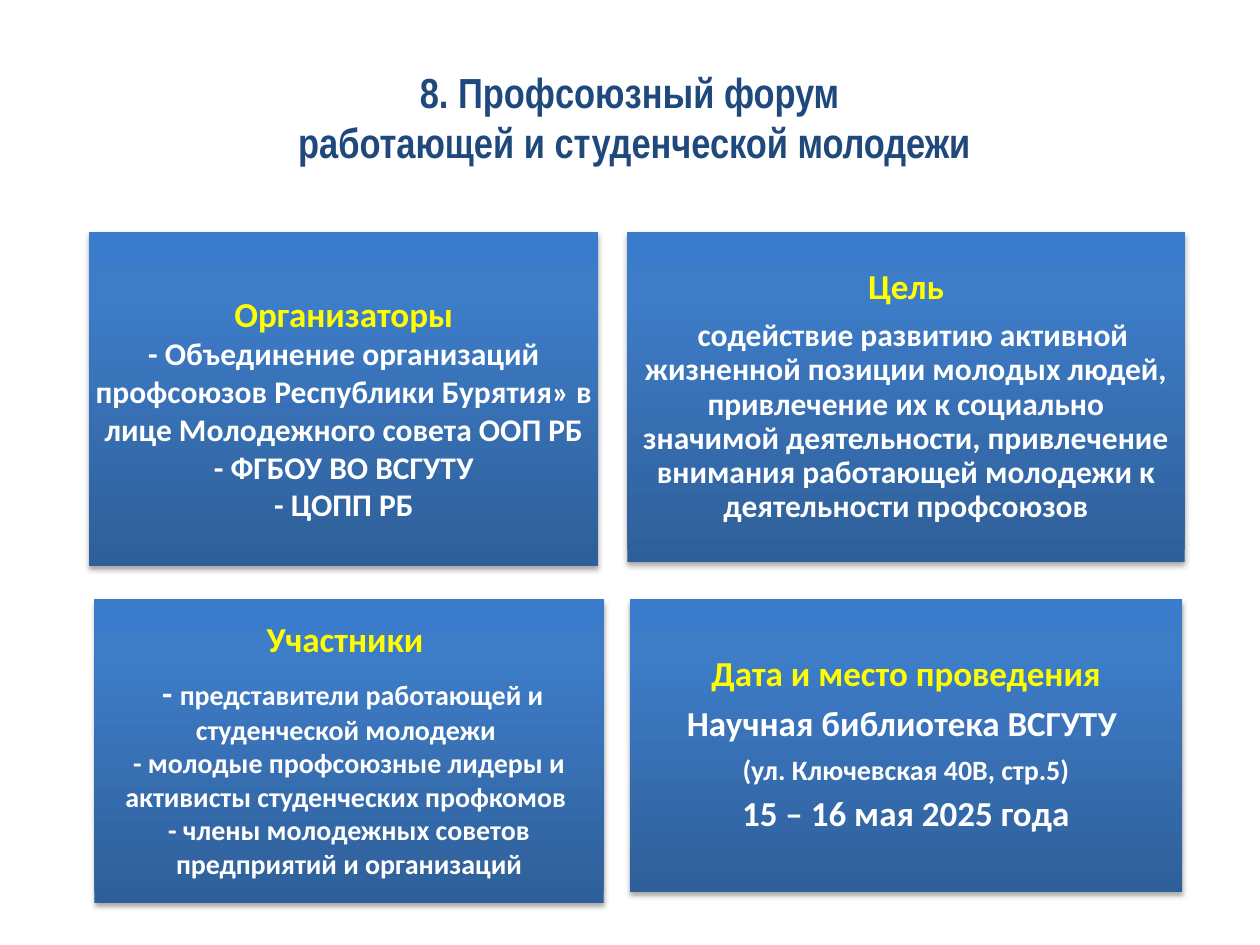
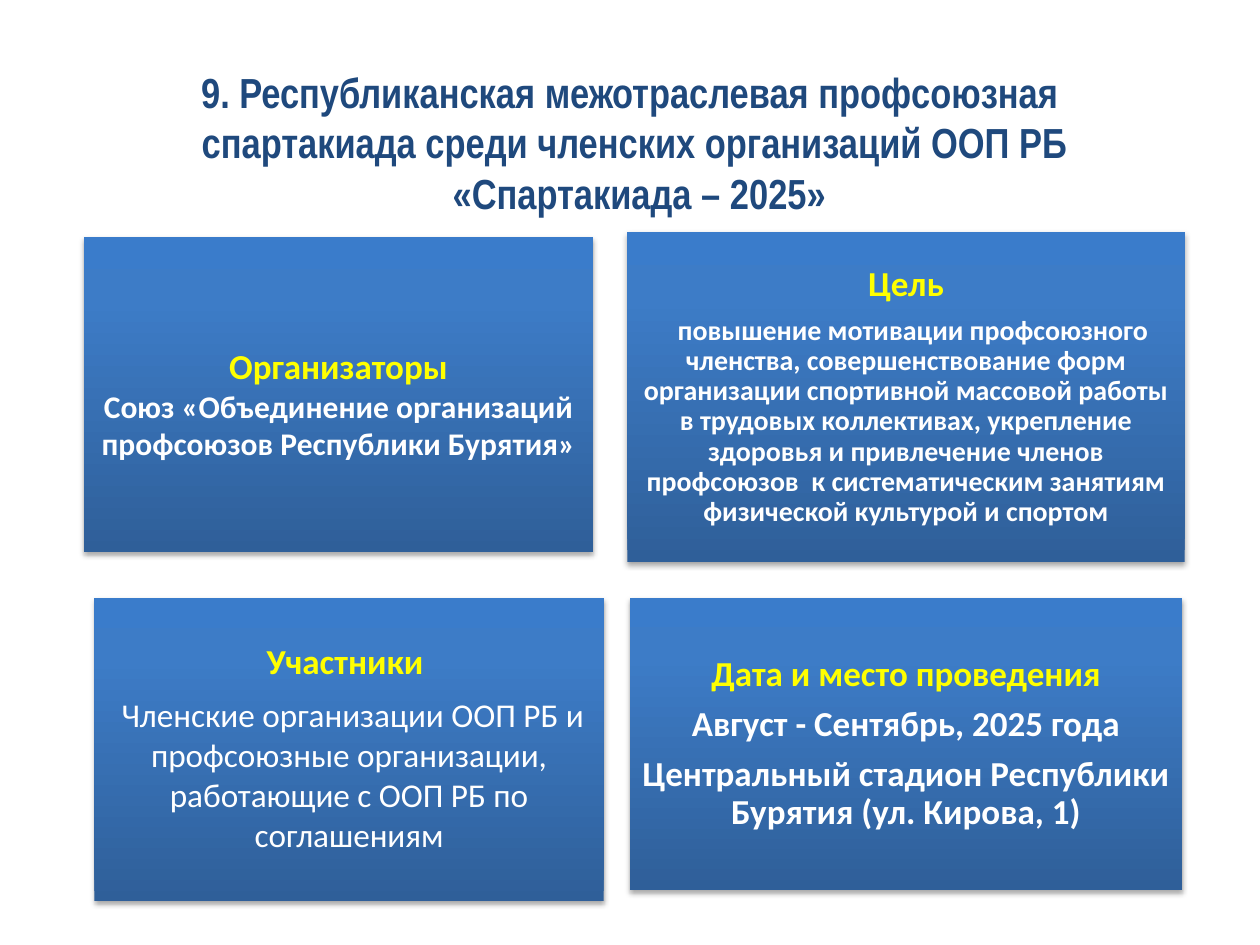
from dataclasses import dataclass

import lxml.etree
import pptx
import pptx.dml.color
import pptx.enum.shapes
import pptx.enum.text
import pptx.oxml.ns
import pptx.util

Pt = pptx.util.Pt
qn = pptx.oxml.ns.qn
CENTER = pptx.enum.text.PP_ALIGN.CENTER
MIDDLE = pptx.enum.text.MSO_ANCHOR.MIDDLE
RECT = pptx.enum.shapes.MSO_SHAPE.RECTANGLE


@dataclass(frozen=True)
class Theme:
    title: str = "1F497D"
    edge: str = "467AB8"
    head: str = "FFFF00"
    body: str = "FFFFFF"
    shade: str = "000000"
    stops: tuple = ((0, "2F5F99"), (80, "3D7CC7"), (100, "3A7CCB"))
    top_font: str = "Arial Narrow"
    font: str = "Calibri"
    top_size: float = 24
    large: float = 20
    dash: float = 19
    mid: float = 18
    small: float = 16


THEME = Theme()


@dataclass(frozen=True)
class Line:
    text: str
    size: float = THEME.large
    color: str = THEME.body
    bold: bool = True
    tight: bool = False
    lead: str = ""
    indent: float = 0


@dataclass(frozen=True)
class Panel:
    left: float
    top: float
    width: float
    height: float
    lines: tuple
    inset: float = 6
    drop: float = 0


def head(text: str, tight: bool = True) -> Line:
    return Line(text, color=THEME.head, tight=tight)


def hosts(left: float, top: float, height: float, *texts: str) -> Panel:
    lines = (head("Организаторы", False),) + tuple(Line(t, THEME.mid) for t in texts)
    return Panel(left, top, 291, height, lines, inset=2, drop=10)


def goal(text: str, size: float) -> Panel:
    return Panel(358.5, 132.5, 318.5, 188.5,
                 (head("Цель"), Line(text, size, tight=True, indent=8)))


def guests(top: float, *lines: Line) -> Panel:
    return Panel(54, top, 291, 173.5, (head("Участники "),) + lines)


def venue(top: float, *lines: Line) -> Panel:
    return Panel(360, top, 315.5, 167, (head("Дата и место проведения"),) + lines)


def add(parent, tag: str, **attrs):
    return lxml.etree.SubElement(parent, qn(tag), {k: str(v) for k, v in attrs.items()})


def style(para, font: str, size: float, color: str, bold: bool) -> None:
    para.alignment = CENTER
    para.font.name = font
    para.font.size = Pt(size)
    para.font.bold = bold
    para.font.color.rgb = pptx.dml.color.RGBColor.from_string(color)


def paras(frame, count: int):
    for _ in range(count - 1):
        frame.add_paragraph()
    return frame.paragraphs


def draw_title(slide, rows: tuple) -> None:
    box = slide.shapes.add_textbox(Pt(31), Pt(34.5), Pt(663), Pt(7.2 + 28.8 * len(rows)))
    frame = box.text_frame
    frame.word_wrap = True
    for para, row in zip(paras(frame, len(rows)), rows):
        para.add_run().text = row
        style(para, THEME.top_font, THEME.top_size, THEME.title, True)
        props = para._p.pPr.find(qn("a:defRPr"))
        edge = add(props, "a:ln", w=Pt(0.83))
        add(add(edge, "a:solidFill"), "a:srgbClr", val=THEME.edge)
        props.insert(0, edge)


def paint(shape) -> None:
    shape.fill.gradient()
    shape.fill.gradient_angle = 90
    shape.line.fill.background()
    shape.shadow.inherit = False
    props = shape._element.spPr
    stops = props.find(".//" + qn("a:gsLst"))
    for stop in list(stops):
        stops.remove(stop)
    for place, color in THEME.stops:
        add(add(stops, "a:gs", pos=place * 1000), "a:srgbClr", val=color)
    cast = add(props.find(qn("a:effectLst")), "a:outerShdw", blurRad=Pt(3.1),
               dist=Pt(1.8), dir=90 * 60000, rotWithShape=0)
    add(add(cast, "a:srgbClr", val=THEME.shade), "a:alpha", val=35000)


def draw_panel(slide, panel: Panel) -> None:
    shape = slide.shapes.add_shape(RECT, Pt(panel.left), Pt(panel.top),
                                   Pt(panel.width), Pt(panel.height))
    paint(shape)
    frame = shape.text_frame
    frame.word_wrap = True
    frame.vertical_anchor = MIDDLE
    frame.margin_left = frame.margin_right = frame.margin_bottom = Pt(panel.inset)
    frame.margin_top = Pt(panel.inset + panel.drop)
    for para, line in zip(paras(frame, len(panel.lines)), panel.lines):
        if line.lead:
            run = para.add_run()
            run.text = line.lead
            run.font.size = Pt(THEME.dash)
        para.add_run().text = line.text
        style(para, THEME.font, line.size, line.color, line.bold)
        if line.tight:
            para.line_spacing = 0.9
            para.space_after = Pt(0.35 * line.size)
        if line.indent:
            para._p.pPr.set("indent", str(Pt(line.indent)))


PAGES = (
    (
        ("8. Профсоюзный форум ", "работающей и студенческой молодежи"),
        (
            hosts(51, 132.5, 191,
                  "- Объединение организаций профсоюзов Республики Бурятия» в лице "
                  "Молодежного совета ООП РБ",
                  "- ФГБОУ ВО ВСГУТУ",
                  "- ЦОПП РБ"),
            goal("содействие развитию активной жизненной позиции молодых людей, "
                 "привлечение их к социально значимой деятельности, привлечение внимания "
                 "работающей молодежи к деятельности профсоюзов", THEME.mid),
            guests(342.5,
                   Line("представители работающей и студенческой молодежи ",
                        THEME.small, lead=" - "),
                   Line("- молодые профсоюзные лидеры и активисты студенческих профкомов ",
                        THEME.small),
                   Line("- члены молодежных советов предприятий и организаций", THEME.small)),
            venue(342.5,
                  Line("Научная библиотека ВСГУТУ ", tight=True),
                  Line("(ул. Ключевская 40В, стр.5)", THEME.small, tight=True),
                  Line("15 – 16 мая 2025 года", tight=True)),
        ),
    ),
    (
        ("9. Республиканская межотраслевая профсоюзная ",
         "спартакиада среди членских организаций ООП РБ",
         " «Спартакиада – 2025»"),
        (
            hosts(48, 135.5, 180,
                  "Союз «Объединение организаций профсоюзов Республики Бурятия»"),
            goal("повышение мотивации профсоюзного членства, совершенствование форм "
                 "организации спортивной массовой работы в трудовых коллективах, "
                 "укрепление здоровья и привлечение членов профсоюзов  к систематическим "
                 "занятиям физической культурой и спортом", THEME.small),
            guests(341.5,
                   Line(" Членские организации ООП РБ и профсоюзные организации, "
                        "работающие с ООП РБ по соглашениям", THEME.dash, bold=False)),
            venue(341.5,
                  Line("Август - Сентябрь, 2025 года", tight=True),
                  Line("Центральный стадион Республики Бурятия (ул. Кирова, 1)",
                       tight=True)),
        ),
    ),
)


def main() -> None:
    deck = pptx.Presentation()
    deck.slide_width = Pt(720)
    deck.slide_height = Pt(540)
    for title, panels in PAGES:
        slide = deck.slides.add_slide(deck.slide_layouts[6])
        draw_title(slide, title)
        for panel in panels:
            draw_panel(slide, panel)
    deck.save("out.pptx")


if __name__ == "__main__":
    main()
